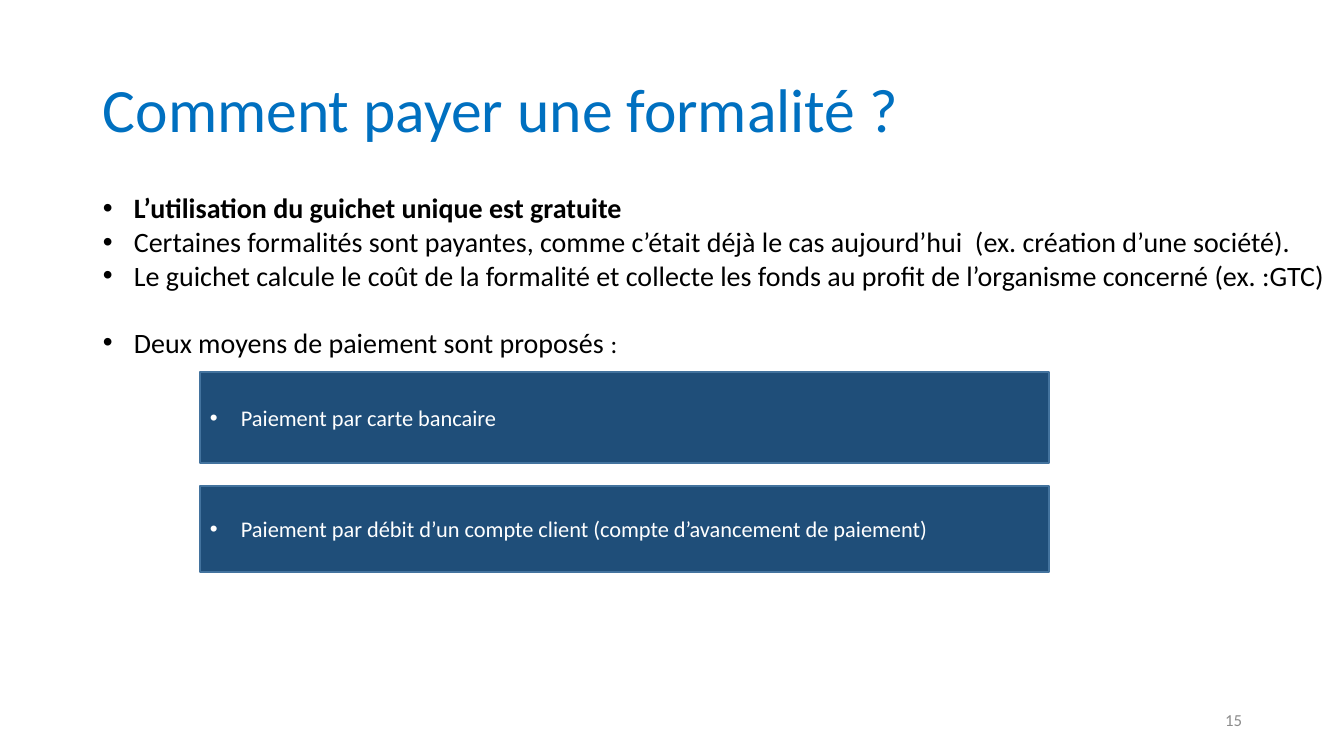
from lxml import etree
from pptx import Presentation, util as u
from pptx.dml.color import RGBColor
from pptx.enum import shapes, text
from pptx.oxml.ns import qn

EMU_PER_PX = 914400 / 100.8
INDENT = 31
WHITE, BLACK, BLUE, NAVY, EDGE, GREY = (
    "FFFFFF", "000000", "0070C0", "1F4E79", "43739E", "8C8C8C")


def px(*lengths):
    """Turn pixel lengths into EMU."""
    return [u.Emu(round(length * EMU_PER_PX)) for length in lengths]


def write(para, content, size, color, bold=False, bullet=False):
    """Add one run to a paragraph, which may be given a hanging bullet."""
    span = para.add_run()
    span.text = content
    span.font.name = "Calibri"
    span.font.size = u.Pt(size)
    span.font.bold = bold
    span.font.color.rgb = RGBColor.from_string(color)
    if bullet:
        props = para._p.get_or_add_pPr()
        indent = px(INDENT)[0]
        props.set("marL", str(indent))
        props.set("indent", str(-indent))
        etree.SubElement(props, qn("a:buFont")).set("typeface", "Arial")
        etree.SubElement(props, qn("a:buChar")).set("char", "•")


deck = Presentation()
deck.slide_width, deck.slide_height = px(1344, 756)
page = deck.slides.add_slide(deck.slide_layouts[6])

# Title and page number
for area, content, size, color, align in (
    ((93, 40, 1159, 146), "Comment payer une formalité ?", 44, BLUE, text.PP_ALIGN.LEFT),
    ((950, 701, 302, 40), "15", 12, GREY, text.PP_ALIGN.RIGHT),
):
    frame = page.shapes.add_textbox(*px(*area)).text_frame
    frame.word_wrap = True
    frame.vertical_anchor = text.MSO_ANCHOR.MIDDLE
    para = frame.paragraphs[0]
    para.alignment = align
    para.line_spacing = 0.9
    write(para, content, size, color)

# Payment methods
for top, height, method in (
    (372, 91, "Paiement par carte bancaire"),
    (486, 86, "Paiement par débit d’un compte client (compte d’avancement de paiement)"),
):
    box = page.shapes.add_shape(shapes.MSO_SHAPE.RECTANGLE, *px(200, top, 849, height))
    box.shadow.inherit = False
    box.fill.solid()
    box.fill.fore_color.rgb = RGBColor.from_string(NAVY)
    box.line.color.rgb = RGBColor.from_string(EDGE)
    box.line.width = u.Pt(1)
    frame = box.text_frame
    frame.word_wrap = True
    frame.vertical_anchor = text.MSO_ANCHOR.MIDDLE
    para = frame.paragraphs[0]
    para.alignment = text.PP_ALIGN.LEFT
    write(para, method, 16, WHITE, bullet=True)

# Explanations
frame = page.shapes.add_textbox(*px(93, 186, 1247, 211)).text_frame
frame.word_wrap = False
frame.auto_size = text.MSO_AUTO_SIZE.SHAPE_TO_FIT_TEXT
points = (
    ("L’utilisation du guichet unique est gratuite", True, 0),
    ("Certaines formalités sont payantes, comme c’était déjà le cas aujourd’hui  "
     "(ex. création d’une société).", False, 0),
    ("Le guichet calcule le coût de la formalité et collecte les fonds au profit "
     "de l’organisme concerné (ex. :GTC)", False, 0),
    ("Deux moyens de paiement sont proposés ", False, 24),
)
for index, (content, bold, space) in enumerate(points):
    para = frame.add_paragraph() if index else frame.paragraphs[0]
    para.space_before = u.Pt(space)
    write(para, content, 20, BLACK, bold, bullet=True)
write(para, ":", 18, BLACK)

deck.save("out.pptx")
